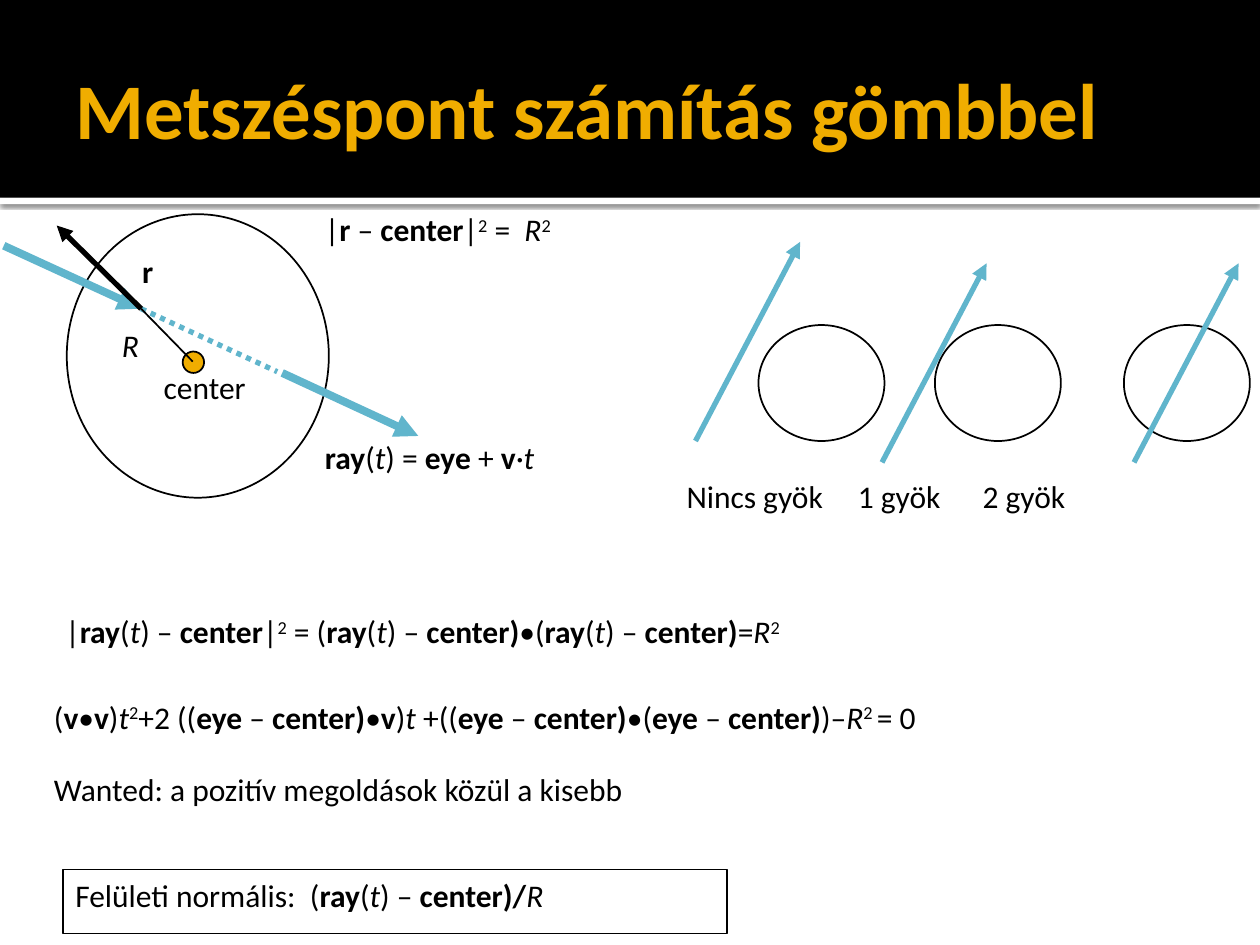
from lxml.etree import SubElement
from pptx import Presentation
from pptx.dml.color import RGBColor
from pptx.enum.dml import MSO_LINE
from pptx.enum.shapes import MSO_CONNECTOR, MSO_SHAPE
from pptx.enum.text import MSO_ANCHOR, PP_ALIGN
from pptx.oxml import parse_xml
from pptx.oxml.ns import nsdecls, qn
from pptx.util import Inches, Pt

COLORS = {"black": "000000", "white": "FFFFFF", "gold": "F0AD00", "blue": "60B5CC"}
RGB = {name: RGBColor.from_string(code) for name, code in COLORS.items()}
FONT = "Calibri"


def write(par, text):
    """Fill a paragraph; *, _ and ^ switch bold, italic and superscript."""
    on = {"*": False, "_": False, "^": False}
    part = ""
    for char in text + "\0":
        if char not in on and char != "\0":
            part += char
            continue
        if part:
            run = par.add_run()
            run.text = part
            font = run.font
            font.name, font.size = FONT, Pt(18)
            font.bold, font.italic = on["*"], on["_"]
            font.color.rgb = RGB["black"]
            if on["^"]:
                run._r.get_or_add_rPr().set("baseline", "30000")
            part = ""
        if char in on:
            on[char] = not on[char]


def draw_line(start, end, color, width, arrow=True):
    line = shapes.add_connector(MSO_CONNECTOR.STRAIGHT, *map(Inches, start + end))
    line.line.color.rgb = RGB[color]
    line.line.width = Pt(width)
    if arrow:
        SubElement(line.line._get_or_add_ln(), qn("a:tailEnd"), type="triangle")
    SubElement(line._element.spPr, qn("a:effectLst"))
    return line


deck = Presentation()
deck.slide_width, deck.slide_height = Inches(10), Inches(7.5)
slide = deck.slides.add_slide(deck.slide_layouts[5])
shapes = slide.shapes

# Header: white strip with a shadow, black band, title on top
for top, height, color in [(1.57, 0.05, "white"), (0, 1.57, "black")]:
    band = shapes.add_shape(MSO_SHAPE.RECTANGLE, 0, Inches(top), Inches(10), Inches(height))
    band.shadow.inherit = False
    band.fill.solid()
    band.fill.fore_color.rgb = RGB[color]
    band.line.fill.background()
    if color == "white":
        band._element.spPr.find(qn("a:effectLst")).append(parse_xml(
            f'<a:outerShdw {nsdecls("a")} blurRad="{Pt(2.5)}" dist="{Pt(0.8)}" dir="5400000">'
            f'<a:srgbClr val="{COLORS["black"]}"><a:alpha val="60000"/></a:srgbClr></a:outerShdw>'))

title = shapes.title
shapes._spTree.append(title._element)
title.left, title.top, title.width, title.height = map(Inches, (0.5, 0.17, 9, 1.37))
frame = title.text_frame
frame.text = "Metszéspont számítás gömbbel"
frame.vertical_anchor = MSO_ANCHOR.MIDDLE
frame.margin_left = Inches(0.1)
frame.margin_right = frame.margin_top = frame.margin_bottom = Inches(0.05)
frame.paragraphs[0].alignment = PP_ALIGN.LEFT
font = frame.paragraphs[0].runs[0].font
font.name, font.size, font.bold = FONT, Pt(45), True
font.color.rgb = RGB["gold"]

# Outlined shapes: sphere, its center, the three root cases, the normal's frame
cases = [6.02, 7.42, 8.92]
outlines = [(MSO_SHAPE.OVAL, 0.53, 1.7, 2.08, 2.25, None),
            (MSO_SHAPE.OVAL, 1.45, 2.79, 0.17, 0.17, "gold")]
outlines += [(MSO_SHAPE.OVAL, left, 2.58, 1, 0.92, None) for left in cases]
outlines.append((MSO_SHAPE.RECTANGLE, 0.5, 6.9, 5.27, 0.51, None))
for kind, left, top, width, height, fill in outlines:
    shape = shapes.add_shape(kind, *map(Inches, (left, top, width, height)))
    shape.shadow.inherit = False
    shape.line.color.rgb = RGB["black"]
    shape.line.width = Pt(1)
    if fill:
        shape.fill.solid()
        shape.fill.fore_color.rgb = RGB[fill]
    else:
        shape.fill.background()

frame = shape.text_frame
frame.vertical_anchor = MSO_ANCHOR.TOP
frame.paragraphs[0].alignment = PP_ALIGN.LEFT
write(frame.paragraphs[0], "Felületi normális:  (*ray*(_t_) – *center)/*_R_")

# Ray through the sphere, radius and normal
hit = (1.12, 2.45)
draw_line((0.03, 1.95), hit, "blue", 4.5)
draw_line((2.24, 2.96), (3.32, 3.46), "blue", 4.5)
inner = draw_line(hit, (2.2, 2.95), "blue", 3, arrow=False)
inner.line.dash_style = MSO_LINE.ROUND_DOT
draw_line(hit, (1.53, 2.87), "black", 1, arrow=False)
draw_line(hit, (0.45, 1.79), "black", 3)

# Rays of the three root cases
for left, bottom in [(5.52, 3.5), (7, 3.67), (9, 3.67)]:
    draw_line((left, bottom), (left + 0.83, bottom - 1.58), "blue", 3)

# Labels and formulas
texts = [
    (1.2, 2.87, 1.01, 0.5, ["center"]),
    (0.87, 2.54, 0.4, 0.5, ["_R_"]),
    (1.03, 1.95, 0.35, 0.5, ["*r*"]),
    (2.48, 1.62, 2.56, 0.5, ["|*r* – *center*|^2^ =  _R_^2^"]),
    (2.48, 3.43, 2.51, 0.5, ["*ray*(_t_) = *eye* + *v*_·t_"]),
    (0.42, 4.81, 7.94, 0.5,
     ["|*ray*(_t_) – *center*|^2^ = (*ray*(_t_) – *center)*•(*ray*(_t_) – *center)*=_R_^2^"]),
    (0.33, 5.49, 9.58, 1.17,
     ["(*v*•*v*)_t_^2^+2 ((*eye *– *center)*•*v*)_t _+((*eye *– *center)*•(*eye *– *center)*)–_R_^2 ^= 0",
      "Wanted: a pozitív megoldások közül a kisebb"]),
    (5.35, 3.74, 4.48, 0.5, ["Nincs gyök\t1 gyök\t2 gyök"]),
]
for left, top, width, height, lines in texts:
    frame = shapes.add_textbox(*map(Inches, (left, top, width, height))).text_frame
    frame.word_wrap = True
    for index, text in enumerate(lines):
        par = frame.add_paragraph() if index else frame.paragraphs[0]
        if index:
            par.space_before = Pt(19.5)
        write(par, text)

# Tab stops of the last label line, the root counts
stops = SubElement(par._p.get_or_add_pPr(), qn("a:tabLst"))
for stop in (1.36, 2.35):
    SubElement(stops, qn("a:tab"), pos=str(Inches(stop)), algn="l")

deck.save("out.pptx")
